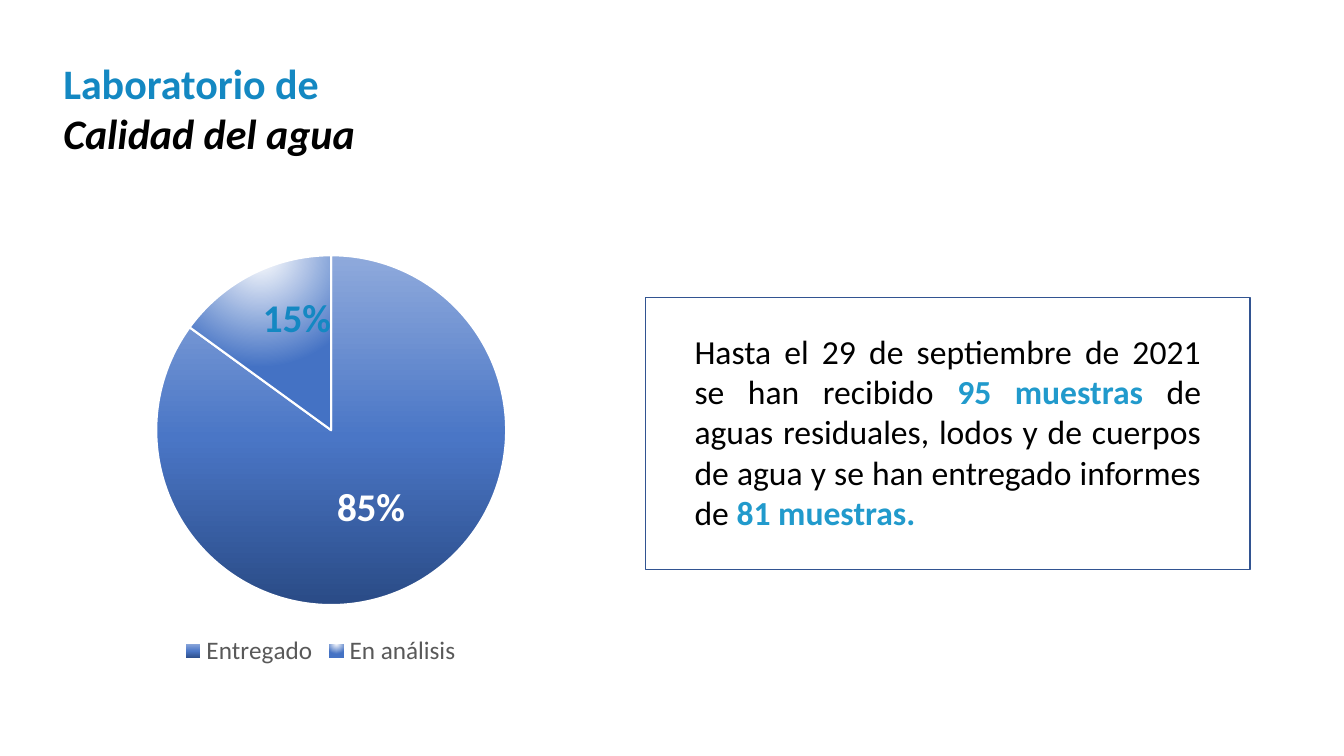
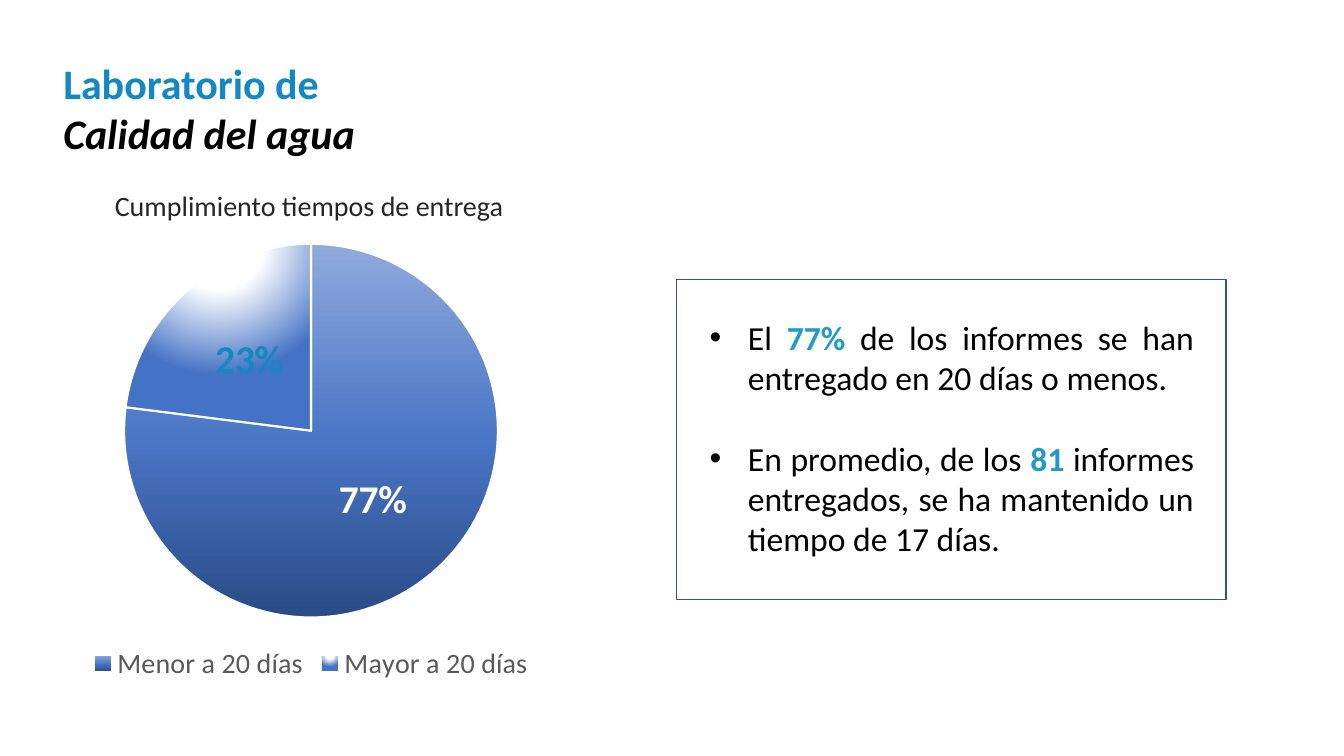
from dataclasses import dataclass

import lxml.etree
import pptx
import pptx.chart.data
import pptx.dml.color
import pptx.enum.chart
import pptx.enum.shapes
import pptx.enum.text
import pptx.oxml
import pptx.oxml.ns
import pptx.util

Inches = pptx.util.Inches
Pt = pptx.util.Pt
qn = pptx.oxml.ns.qn


@dataclass(frozen=True)
class Theme:
    font: str = "Calibri"
    black: str = "000000"
    white: str = "FFFFFF"
    heading: str = "1488C2"
    accent: str = "219ACC"
    frame: str = "325491"
    legend: str = "595959"
    caption: str = "262626"
    slice_dark: str = "2A4B86"
    slice_mid: str = "4A76C6"
    slice_light: str = "8FAADC"
    slice_blue: str = "4472C4"
    heading_size: int = 30
    label_size: int = 28
    body_size: int = 24
    caption_size: int = 20


THEME = Theme()
MAIN_STOPS = [(0, THEME.slice_dark), (48, THEME.slice_mid), (100, THEME.slice_light)]
LINEAR = '<a:lin ang="16200000" scaled="1"/>'
RADIAL = ('<a:path path="circle"><a:fillToRect l="50000" t="-80000" '
          'r="50000" b="180000"/></a:path>')


def rgb(value):
    return pptx.dml.color.RGBColor.from_string(value)


def style_font(font, size, color, bold=False, italic=False):
    font.name = THEME.font
    font.size = Pt(size)
    font.color.rgb = rgb(color)
    font.bold = bold
    font.italic = italic


def add_text_frame(slide, box):
    frame = slide.shapes.add_textbox(*map(Inches, box)).text_frame
    frame.word_wrap = True
    return frame


# Shared heading
def add_heading(slide):
    frame = add_text_frame(slide, (0.53, 0.52, 3.83, 1.11))
    frame.text = "Laboratorio de\nCalidad del agua"
    first, second = frame.paragraphs
    style_font(first.runs[0].font, THEME.heading_size, THEME.heading, bold=True)
    style_font(second.runs[0].font, THEME.heading_size, THEME.black, bold=True, italic=True)


def add_caption(slide, text, box):
    frame = add_text_frame(slide, box)
    frame.text = text
    style_font(frame.paragraphs[0].runs[0].font, THEME.caption_size, THEME.caption)


# Framed message: each paragraph alternates plain and highlighted pieces
def add_message(slide, paragraphs, text_box, frame_box, bulleted=False):
    frame = add_text_frame(slide, text_box)
    for index, pieces in enumerate(paragraphs):
        paragraph = frame.paragraphs[0] if index == 0 else frame.add_paragraph()
        paragraph.alignment = pptx.enum.text.PP_ALIGN.JUSTIFY
        if index:
            paragraph.space_before = Pt(29)
        if bulleted:
            add_bullet(paragraph)
        for position, piece in enumerate(pieces):
            run = paragraph.add_run()
            run.text = piece
            highlighted = position % 2 == 1
            style_font(run.font, THEME.body_size,
                       THEME.accent if highlighted else THEME.black, bold=highlighted)

    border = slide.shapes.add_shape(
        pptx.enum.shapes.MSO_SHAPE.RECTANGLE, *map(Inches, frame_box))
    border.shadow.inherit = False
    border.fill.background()
    border.line.color.rgb = rgb(THEME.frame)
    border.line.width = Pt(1)


def add_bullet(paragraph):
    properties = paragraph._p.get_or_add_pPr()
    properties.set("marL", str(Inches(0.38)))
    properties.set("indent", str(-Inches(0.38)))
    lxml.etree.SubElement(properties, qn("a:buFont")).set("typeface", "Arial")
    lxml.etree.SubElement(properties, qn("a:buChar")).set("char", "•")


# Pie chart parts
def gradient(stops, direction):
    stop_xml = "".join(
        f'<a:gs pos="{pos * 1000}"><a:srgbClr val="{color}"/></a:gs>' for pos, color in stops)
    return pptx.oxml.parse_xml(
        f'<a:gradFill {pptx.oxml.ns.nsdecls("a")} rotWithShape="1">'
        f"<a:gsLst>{stop_xml}</a:gsLst>{direction}</a:gradFill>")


def manual_layout(**settings):
    items = "".join(f'<c:{key} val="{value}"/>' for key, value in settings.items())
    return pptx.oxml.parse_xml(
        f'<c:layout {pptx.oxml.ns.nsdecls("c")}><c:manualLayout>{items}'
        "</c:manualLayout></c:layout>")


def style_slice(series, index, fill):
    outline = series.points[index].format.line
    outline.color.rgb = rgb(THEME.white)
    outline.width = Pt(1.5)
    properties = series._element.xpath(f'c:dPt[c:idx/@val="{index}"]/c:spPr')[0]
    properties.insert(0, fill)


def style_labels(series, shift):
    center = pptx.enum.chart.XL_LABEL_POSITION.CENTER
    labels = series.data_labels
    labels.show_percentage = True
    labels.show_value = False
    labels.position = center
    style_font(labels.font, THEME.label_size, THEME.white, bold=True)

    small_label = series.points[1].data_label
    style_font(small_label.font, THEME.label_size, THEME.heading, bold=True)
    small_label.position = center
    element = series._element.xpath("c:dLbls/c:dLbl")[0]
    element.find(qn("c:showVal")).set("val", "0")
    element.find(qn("c:showPercent")).set("val", "1")
    if shift:
        element.insert(1, manual_layout(x=shift[0], y=shift[1]))


def add_pie(slide, shares, box, plot_box, small_stops, legend_size, label_shift=None):
    data = pptx.chart.data.CategoryChartData()
    data.categories = list(shares)
    data.add_series("Series 1", list(shares.values()))
    chart = slide.shapes.add_chart(
        pptx.enum.chart.XL_CHART_TYPE.PIE, *map(Inches, box), data).chart
    chart.has_title = False
    style_font(chart.font, legend_size, THEME.black)

    chart.has_legend = True
    chart.legend.position = pptx.enum.chart.XL_LEGEND_POSITION.BOTTOM
    chart.legend.include_in_layout = False
    style_font(chart.legend.font, legend_size, THEME.legend)

    pie = chart.plots[0]
    pie.vary_by_categories = True
    series = pie.series[0]
    style_slice(series, 0, gradient(MAIN_STOPS, LINEAR))
    style_slice(series, 1, gradient(small_stops, RADIAL))
    style_labels(series, label_shift)

    plot_area = chart._chartSpace.xpath("c:chart/c:plotArea")[0]
    for automatic in plot_area.findall(qn("c:layout")):
        plot_area.remove(automatic)
    x, y, w, h = plot_box
    plot_area.insert(0, manual_layout(
        layoutTarget="inner", xMode="edge", yMode="edge", x=x, y=y, w=w, h=h))


# Slides
def build_samples(slide):
    add_pie(slide, {"Entregado": 85, "En análisis": 15},
            (0.55, 1.97, 5.26, 4.69), (0.19, 0.12, 0.66, 0.74),
            [(0, THEME.white), (100, THEME.slice_blue)],
            legend_size=18, label_shift=(0.01, -0.07))
    add_message(slide, [[
        "Hasta el 29 de septiembre de 2021 se han recibido ", "95 muestras",
        " de aguas residuales, lodos y de cuerpos de agua y se han entregado informes de ",
        "81 muestras."]],
        (6.79, 3.23, 5.22, 2.12), (6.4, 2.95, 6, 2.7))
    add_heading(slide)


def build_delivery_times(slide):
    add_caption(slide, "Cumplimiento tiempos de entrega", (1.04, 1.82, 4.09, 0.47))
    add_pie(slide, {"Menor a 20 días": 77, "Mayor a 20 días": 23},
            (0.58, 2.28, 5.01, 4.53), (0.13, 0.03, 0.74, 0.82),
            [(0, THEME.white), (35, THEME.white), (100, THEME.slice_blue)],
            legend_size=20)
    add_message(slide, [
        ["El ", "77%", " de los informes se han entregado en 20 días o menos."],
        ["En promedio, de los ", "81",
         " informes entregados, se ha mantenido un tiempo de 17 días."]],
        (6.94, 3.09, 5, 2.52), (6.71, 2.77, 5.45, 3.18), bulleted=True)
    add_heading(slide)


def main():
    deck = pptx.Presentation()
    deck.slide_width = Inches(13.33)
    deck.slide_height = Inches(7.5)
    for build in (build_samples, build_delivery_times):
        build(deck.slides.add_slide(deck.slide_layouts[6]))
    deck.save("out.pptx")


if __name__ == "__main__":
    main()
